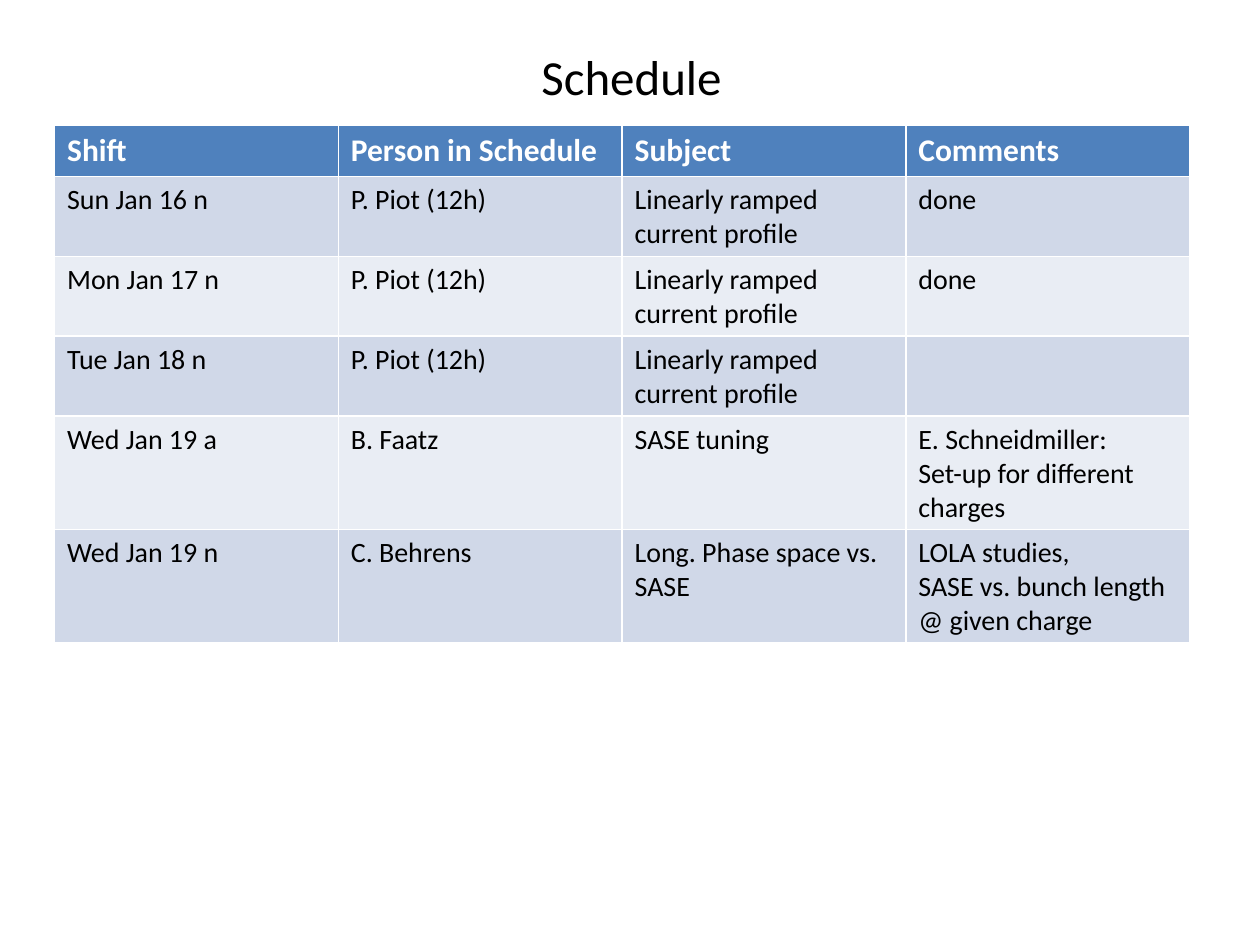
from dataclasses import dataclass

from pptx import Presentation
from pptx.dml.color import RGBColor
from pptx.enum.text import MSO_ANCHOR, PP_ALIGN
from pptx.slide import Slide
from pptx.table import _Cell
from pptx.text.text import TextFrame
from pptx.util import Cm, Pt


@dataclass
class Shift:
    time: str
    person: str
    subject: str
    comments: str = ""

    def entries(self) -> list[str]:
        return [self.time, self.person, self.subject, self.comments]


RAMPED = "Linearly ramped current profile"
HEADINGS = ["Shift", "Person in Schedule", "Subject", "Comments"]
SHIFTS = [
    Shift("Sun Jan 16 n", "P. Piot (12h)", RAMPED, "done"),
    Shift("Mon Jan 17 n", "P. Piot (12h)", RAMPED, "done"),
    Shift("Tue Jan 18 n", "P. Piot (12h)", RAMPED),
    Shift("Wed Jan 19 a", "B. Faatz", "SASE tuning",
          "E. Schneidmiller:\nSet-up for different charges"),
    Shift("Wed Jan 19 n", "C. Behrens", "Long. Phase space vs. SASE",
          "LOLA studies,\nSASE vs. bunch length @ given charge"),
]

TITLE_FONT = {"name": "Calibri", "size": Pt(28), "bold": False}
HEADING_FONT = {"name": "Calibri", "size": Pt(18), "bold": True}
ENTRY_FONT = {"name": "Calibri", "size": Pt(16), "bold": False}
HEADING_FILL = "4F81BD"
BAND_FILLS = ["D0D8E8", "E9EDF4"]
COLUMN_WIDTH = Cm(5.72)
ROW_HEIGHT = Cm(1.03)


def rgb(hex_color: str) -> RGBColor:
    return RGBColor.from_string(hex_color)


def write(frame: TextFrame, text: str, font_format: dict, color: str) -> None:
    frame.text = text
    for paragraph in frame.paragraphs:
        for attribute, value in font_format.items():
            setattr(paragraph.font, attribute, value)
        paragraph.font.color.rgb = rgb(color)
        for run in paragraph.runs:
            for attribute, value in font_format.items():
                setattr(run.font, attribute, value)
            run.font.color.rgb = rgb(color)


def fill_cell(cell: _Cell, text: str, font_format: dict, color: str, fill: str) -> None:
    cell.fill.solid()
    cell.fill.fore_color.rgb = rgb(fill)
    write(cell.text_frame, text, font_format, color)


def draw_title(slide: Slide, text: str) -> None:
    title = slide.shapes.add_textbox(Cm(1.3), Cm(0.33), Cm(22.86), Cm(2.39))
    frame = title.text_frame
    frame.word_wrap = True
    frame.vertical_anchor = MSO_ANCHOR.MIDDLE
    write(frame, text, TITLE_FONT, "000000")
    frame.paragraphs[0].alignment = PP_ALIGN.CENTER


def draw_schedule(slide: Slide, shifts: list[Shift]) -> None:
    row_count, column_count = len(shifts) + 1, len(HEADINGS)
    schedule = slide.shapes.add_table(
        row_count, column_count, Cm(1.1), Cm(2.53),
        COLUMN_WIDTH * column_count, ROW_HEIGHT * row_count).table

    # Header row
    for column, heading in enumerate(HEADINGS):
        fill_cell(schedule.cell(0, column), heading, HEADING_FONT, "FFFFFF", HEADING_FILL)

    # Shift rows in alternating bands
    for row, shift in enumerate(shifts):
        band = BAND_FILLS[row % len(BAND_FILLS)]
        for column, entry in enumerate(shift.entries()):
            fill_cell(schedule.cell(row + 1, column), entry, ENTRY_FONT, "000000", band)


def main() -> None:
    presentation = Presentation()
    presentation.slide_width, presentation.slide_height = Cm(25.4), Cm(19.05)
    slide = presentation.slides.add_slide(presentation.slide_layouts[6])
    draw_title(slide, "Schedule")
    draw_schedule(slide, SHIFTS)
    presentation.save("out.pptx")


if __name__ == "__main__":
    main()
